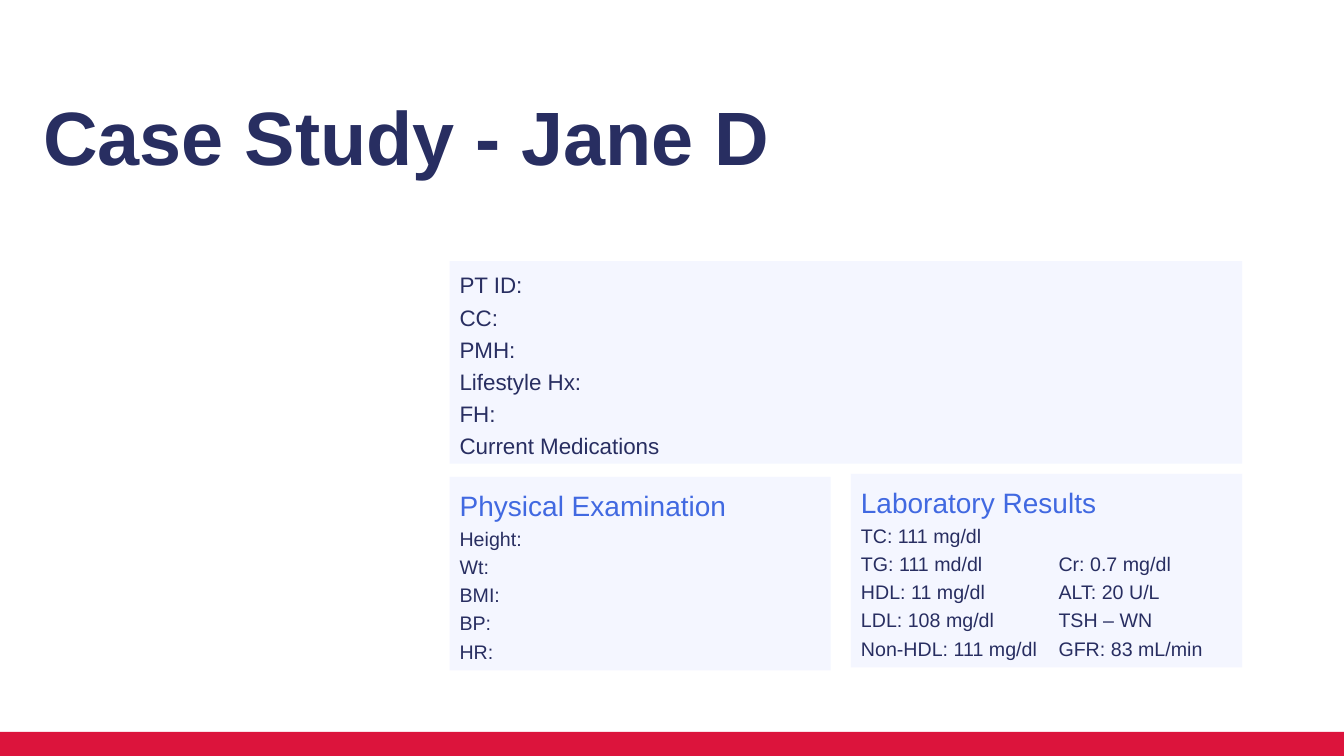
from pptx import Presentation
from pptx import util as u
from pptx.dml.color import RGBColor
from pptx.enum import shapes, text

PX = 9144  # 100 px to the inch
THEME = dict(
    font="Arial", navy="282E61", blue="4169E1", panel="F4F6FF", red="DC143C",
    title=54, heading=20, body=16, small=14,
)

prs = Presentation()
prs.slide_width, prs.slide_height = 1333 * PX, 750 * PX
s = prs.slides.add_slide(prs.slide_layouts[6])


def add_box(box, fill=None):
    """Add a filled rectangle, or a plain text box when there is no fill."""
    box = [n * PX for n in box]
    if fill is None:
        return s.shapes.add_textbox(*box)
    sp = s.shapes.add_shape(shapes.MSO_SHAPE.RECTANGLE, *box)
    sp.shadow.inherit = False
    sp.fill.solid()
    sp.fill.fore_color.rgb = RGBColor.from_string(THEME[fill])
    sp.line.fill.background()
    return sp


def write(sp, lines, size="small", color="navy", heading=None, bold=False,
          spacing=1.2, anchor=text.MSO_ANCHOR.TOP):
    """Fill a shape with one paragraph per line, under an optional heading."""
    tf = sp.text_frame
    tf.word_wrap = True
    tf.vertical_anchor = anchor
    rows = [(line, size, color) for line in lines]
    if heading:
        rows.insert(0, (heading, "heading", "blue"))
    for i, (line, row_size, row_color) in enumerate(rows):
        p = tf.add_paragraph() if i else tf.paragraphs[0]
        p.alignment = text.PP_ALIGN.LEFT
        p.line_spacing = spacing
        r = p.add_run()
        r.text = line
        r.font.name = THEME["font"]
        r.font.size = u.Pt(THEME[row_size])
        r.font.bold = bold
        r.font.color.rgb = RGBColor.from_string(THEME[row_color])


# Footer band
add_box((0, 726, 1333, 24), "red")

# Title
write(add_box((33, 85, 758, 109)), ["Case Study - Jane D"], size="title",
      bold=True, spacing=0.9, anchor=text.MSO_ANCHOR.MIDDLE)

# Patient history
write(add_box((446, 259, 786, 201), "panel"),
      ["PT ID:", "CC:", "PMH:", "Lifestyle Hx:", "FH:", "Current Medications"],
      size="body")

# Physical examination
write(add_box((446, 473, 378, 192), "panel"),
      ["Height:", "Wt:", "BMI:", "BP:", "HR:"], heading="Physical Examination")

# Laboratory results, with a second column
write(add_box((844, 470, 388, 192), "panel"),
      ["TC: 111 mg/dl", "TG: 111 md/dl", "HDL: 11 mg/dl", "LDL: 108 mg/dl",
       "Non-HDL: 111 mg/dl"], heading="Laboratory Results")
write(add_box((1040, 538, 191, 123)),
      ["Cr: 0.7 mg/dl", "ALT: 20 U/L", "TSH – WN", "GFR: 83 mL/min"])

prs.save("out.pptx")
